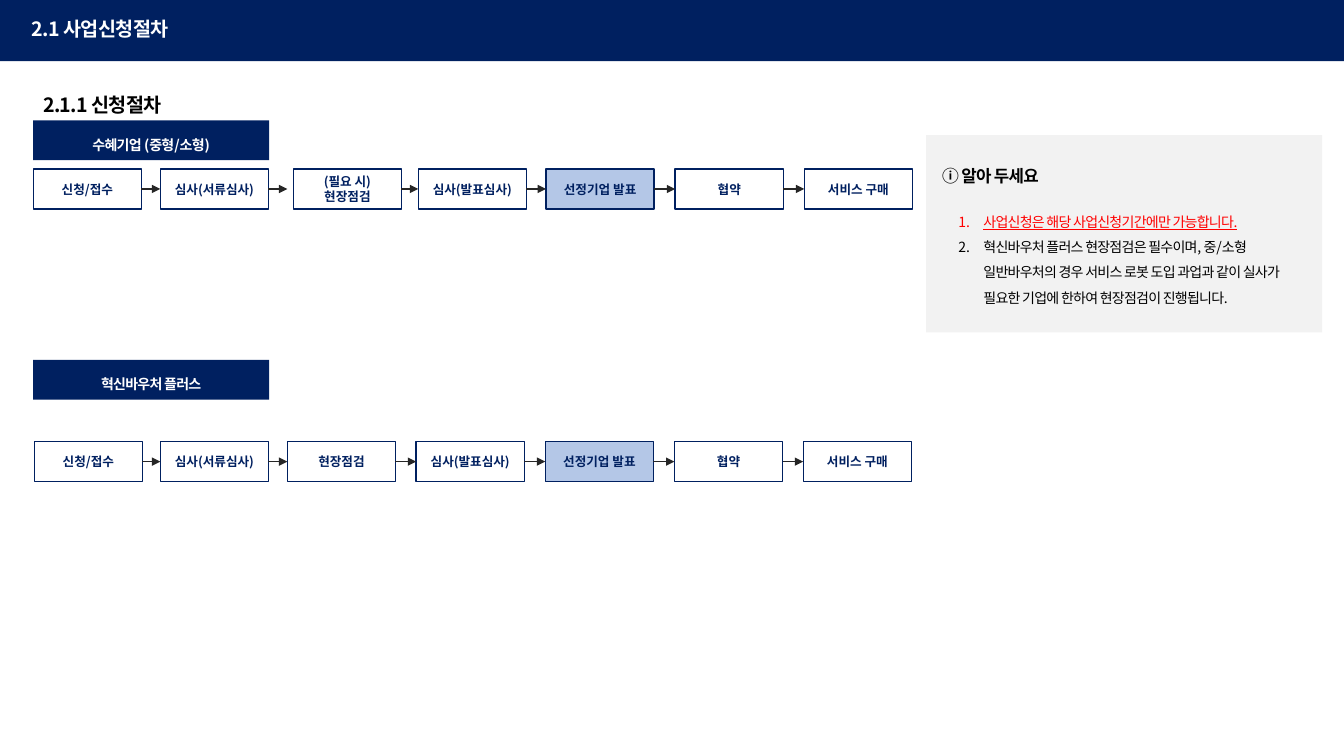
"""Build the application procedure slide with two process flows and a note panel."""
from dataclasses import dataclass

import pptx
import pptx.dml.color
import pptx.enum.shapes
import pptx.enum.text
import pptx.oxml.ns
import pptx.util
from lxml import etree

Pt = pptx.util.Pt
Align = pptx.enum.text.PP_ALIGN
Anchor = pptx.enum.text.MSO_ANCHOR
qn = pptx.oxml.ns.qn


@dataclass(frozen=True)
class Theme:
    font: str = "Noto Sans CJK KR"
    navy: str = "002060"
    highlight: str = "B4C7E7"
    panel: str = "F2F2F2"
    arrow: str = "262626"
    white: str = "FFFFFF"
    black: str = "000000"
    red: str = "FF0000"
    title: int = 14
    note_heading: int = 12
    body: int = 10
    step: int = 9
    tight: float = -0.5


class Slide:
    def __init__(self, page, theme):
        self.page = page
        self.theme = theme

    def color(self, code):
        return pptx.dml.color.RGBColor.from_string(code)

    def frame(self, shape, margins, anchor):
        frame = shape.text_frame
        frame.word_wrap = True
        frame.vertical_anchor = anchor
        side, edge = margins
        frame.margin_left = frame.margin_right = Pt(side)
        frame.margin_top = frame.margin_bottom = Pt(edge)
        return frame

    def add_span(self, para, text, size, color, bold=True, spacing=0.0, underline=False):
        span = para.add_run()
        span.text = text
        font = span.font
        font.size, font.bold, font.name = Pt(size), bold, self.theme.font
        font.color.rgb = self.color(color)
        if underline:
            font.underline = True
        properties = span._r.get_or_add_rPr()
        if spacing:
            properties.set("spc", str(round(spacing * 100)))
        etree.SubElement(properties, qn("a:ea")).set("typeface", self.theme.font)

    def block(self, left, top, width, height, fill, line=None):
        kind = pptx.enum.shapes.MSO_SHAPE.RECTANGLE
        box = self.page.shapes.add_shape(kind, Pt(left), Pt(top), Pt(width), Pt(height))
        box.shadow.inherit = False
        box.fill.solid()
        box.fill.fore_color.rgb = self.color(fill)
        if line:
            box.line.color.rgb = self.color(line)
            box.line.width = Pt(1)
        else:
            box.line.fill.background()
        return box

    def heading(self, left, top, width, height, text, color, line_spacing=1.0):
        box = self.page.shapes.add_textbox(Pt(left), Pt(top), Pt(width), Pt(height))
        para = self.frame(box, (7.2, 3.6), Anchor.TOP).paragraphs[0]
        para.line_spacing = line_spacing
        self.add_span(para, text, self.theme.title, color, spacing=self.theme.tight)

    def label(self, top, text):
        box = self.block(23.75, top, 168.5, 28.5, self.theme.navy)
        para = self.frame(box, (0, 0), Anchor.MIDDLE).paragraphs[0]
        para.alignment = Align.CENTER
        para.line_spacing = 1.5
        self.add_span(para, text, self.theme.body, self.theme.white, spacing=self.theme.tight)

    def step(self, left, top, lines, fill):
        box = self.block(left, top, 77.25, 28.5, fill, self.theme.navy)
        frame = self.frame(box, (1.5, 3.6), Anchor.MIDDLE)
        for index, text in enumerate(lines):
            para = frame.add_paragraph() if index else frame.paragraphs[0]
            para.alignment = Align.CENTER
            self.add_span(para, text, self.theme.step, self.theme.navy)
        return box

    def arrow(self, start, end, length=None):
        right = start.left + start.width
        middle = start.top + start.height // 2
        stop = right + Pt(length) if length else end.left
        kind = pptx.enum.shapes.MSO_CONNECTOR.STRAIGHT
        connector = self.page.shapes.add_connector(kind, right, middle, stop, middle)
        connector.begin_connect(start, 3)
        if not length:
            connector.end_connect(end, 1)
        connector.line.color.rgb = self.color(self.theme.arrow)
        connector.line.width = Pt(1)
        properties = connector._element.spPr
        etree.SubElement(properties.find(qn("a:ln")), qn("a:tailEnd")).set("type", "triangle")
        etree.SubElement(properties, qn("a:effectLst"))

    def flow(self, top, steps, highlighted, short_arrows):
        boxes = []
        for left, *lines in steps:
            fill = self.theme.highlight if lines == [highlighted] else self.theme.white
            boxes.append(self.step(left, top, lines, fill))
        for index, (start, end) in enumerate(zip(boxes, boxes[1:])):
            self.arrow(start, end, short_arrows.get(index))

    def notes(self, left, top, width, height, heading, items):
        box = self.block(left, top, width, height, self.theme.panel)
        frame = self.frame(box, (11.5, 14.4), Anchor.TOP)
        para = frame.paragraphs[0]
        para.alignment = Align.LEFT
        para.line_spacing = 1.5
        para.space_after = Pt(14)
        self.add_span(para, heading, self.theme.note_heading, self.theme.black,
                      spacing=self.theme.tight)
        for text, color, underline in items:
            para = frame.add_paragraph()
            para.alignment = Align.LEFT
            para.line_spacing = 1.5
            properties = para._p.get_or_add_pPr()
            properties.set("marL", str(Pt(29.5)))
            properties.set("indent", str(Pt(-18)))
            etree.SubElement(properties, qn("a:buAutoNum")).set("type", "arabicPeriod")
            self.add_span(para, text, self.theme.body, color, False, self.theme.tight, underline)


def main():
    theme = Theme()
    deck = pptx.Presentation()
    deck.slide_width, deck.slide_height = Pt(960), Pt(540)
    slide = Slide(deck.slides.add_slide(deck.slide_layouts[6]), theme)

    slide.block(0, 0, 960, 43.75, theme.navy)
    slide.heading(15.5, 8.5, 362, 24.5, "2.1 사업신청절차", theme.white)
    slide.heading(23.75, 54.5, 291.5, 29.5, "2.1.1 신청절차", theme.black, 1.5)
    slide.notes(661.5, 96.5, 283, 141, "ⓘ 알아 두세요", [
        ("사업신청은 해당 사업신청기간에만 가능합니다.", theme.red, True),
        ("혁신바우처 플러스 현장점검은 필수이며, 중/소형 일반바우처의 경우 서비스 로봇 도입 "
         "과업과 같이 실사가 필요한 기업에 한하여 현장점검이 진행됩니다.", theme.black, False),
    ])

    announcement = "선정기업 발표"
    slide.label(86, "수혜기업 (중형/소형)")
    slide.flow(120.75, [
        (23.75, "신청/접수"),
        (114.5, "심사(서류심사)"),
        (209.5, "(필요 시)", "현장점검"),
        (298.75, "심사(발표심사)"),
        (390, announcement),
        (482.25, "협약"),
        (574.5, "서비스 구매"),
    ], announcement, {1: 13.5})

    slide.label(257, "혁신바우처 플러스")
    slide.flow(315.5, [
        (24.5, "신청/접수"),
        (114.5, "심사(서류심사)"),
        (205.25, "현장점검"),
        (297.25, "심사(발표심사)"),
        (389.5, announcement),
        (481.75, "협약"),
        (573.75, "서비스 구매"),
    ], announcement, {})

    deck.save("out.pptx")


if __name__ == "__main__":
    main()
